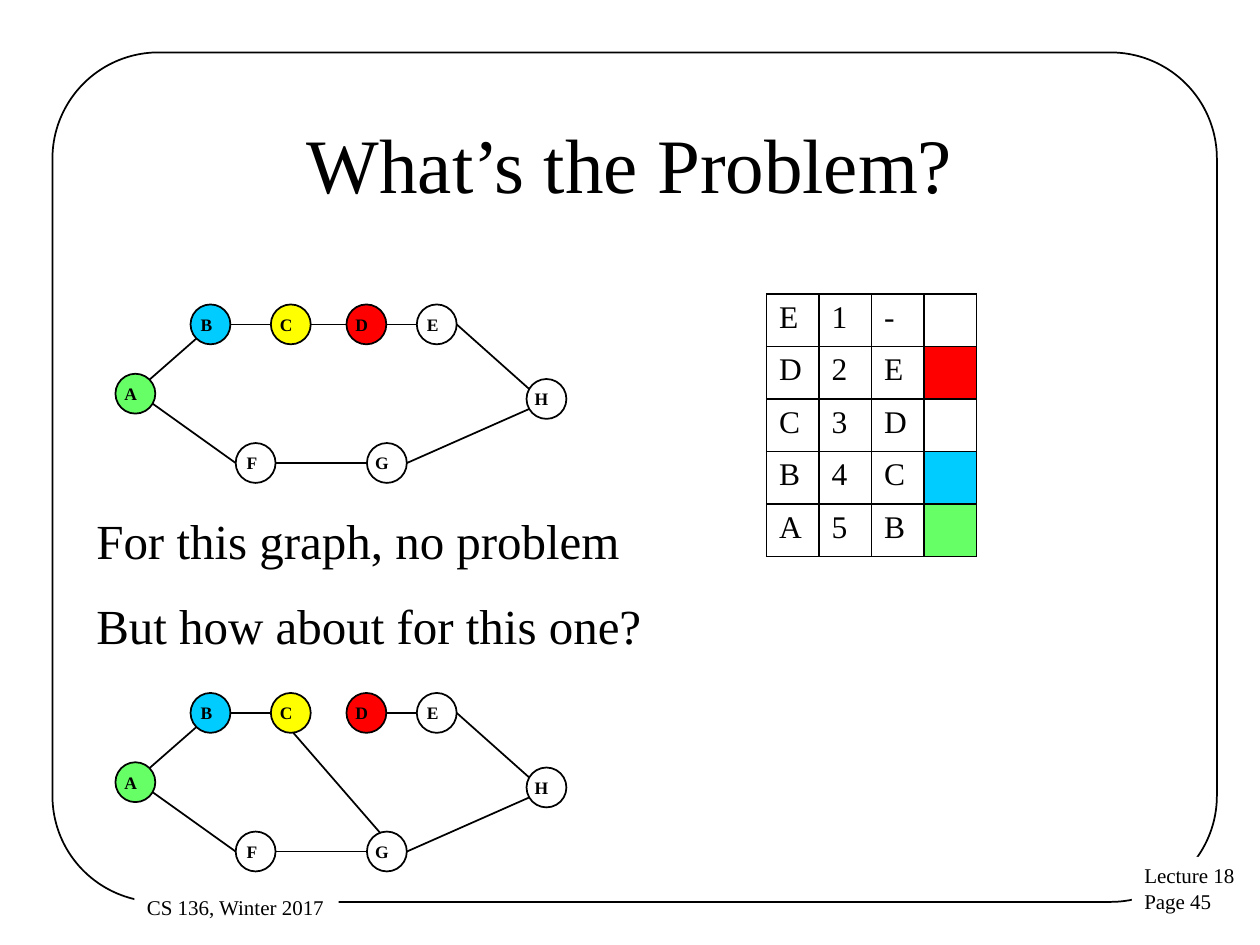
import math

import lxml.etree
import pptx
import pptx.dml.color
import pptx.enum.shapes
import pptx.enum.text
import pptx.oxml.ns
import pptx.util

COLORS = {"ink": "000000", "paper": "FFFFFF", "green": "66FF66",
          "blue": "00CCFF", "yellow": "FFFF00", "red": "FF0000"}
NODES = {"A": (2.58, 7.5, "green"), "B": (4.01, 6.18, "blue"),
         "C": (5.54, 6.18, "yellow"), "D": (6.98, 6.18, "red"),
         "E": (8.32, 6.18, None), "F": (4.87, 8.82, None),
         "G": (7.37, 8.82, None), "H": (10.41, 7.6, None)}
SHARED_EDGES = [("A", -45, "B", 135), ("A", 30, "F", 180),
                ("B", 0, "C", 180), ("D", 0, "E", 180),
                ("F", 0, "G", 180), ("G", 0, "H", 150),
                ("E", 0, "H", 210)]
ROUTES = [("E", "1", "-", "paper"), ("D", "2", "E", "red"),
          ("C", "3", "D", "paper"), ("B", "4", "C", "blue"),
          ("A", "5", "B", "green")]


class Deck:
    """Draws in one style on the current slide, in a grid of 24 columns by 18 rows."""

    font = "Times New Roman"
    node_size = 0.76

    def __init__(self):
        self.prs = pptx.Presentation()
        self.prs.slide_width = pptx.util.Inches(10)
        self.prs.slide_height = pptx.util.Inches(7.5)
        self.slide = self.prs.slides.add_slide(self.prs.slide_layouts[5])

    def grid(self, *values):
        return [round(v * self.prs.slide_width / 24) for v in values]

    def color(self, name):
        return pptx.dml.color.RGBColor.from_string(COLORS[name])

    def paint(self, item, name):
        if name:
            item.fill.solid()
            item.fill.fore_color.rgb = self.color(name)
        else:
            item.fill.background()

    def outline(self, sp):
        sp.line.color.rgb = self.color("ink")
        sp.line.width = pptx.util.Pt(1)

    def set_text(self, tf, text, size, bold=False, align=None):
        tf.text = text
        for p in tf.paragraphs:
            p.alignment = align
            p.font.name = self.font
            p.font.size = pptx.util.Pt(size)
            p.font.bold = bold
            p.font.color.rgb = self.color("ink")

    def title(self, text, *box):
        sp = self.slide.shapes.title
        sp.left, sp.top, sp.width, sp.height = self.grid(*box)
        sp.text_frame.vertical_anchor = pptx.enum.text.MSO_ANCHOR.MIDDLE
        self.set_text(sp.text_frame, text, 44, align=pptx.enum.text.PP_ALIGN.CENTER)

    def text(self, text, size, *box, fill=None):
        sp = self.slide.shapes.add_textbox(*self.grid(*box))
        self.paint(sp, fill)
        sp.text_frame.word_wrap = False
        sp.text_frame.auto_size = pptx.enum.text.MSO_AUTO_SIZE.SHAPE_TO_FIT_TEXT
        self.set_text(sp.text_frame, text, size)

    def shape(self, kind, fill, *box):
        sp = self.slide.shapes.add_shape(kind, *self.grid(*box))
        sp.shadow.inherit = False
        self.paint(sp, fill)
        self.outline(sp)
        return sp

    def frame(self, *box):
        sp = self.shape(pptx.enum.shapes.MSO_SHAPE.ROUNDED_RECTANGLE, None, *box)
        sp.adjustments[0] = 0.125

    def node(self, name, x, y, fill):
        d = self.node_size
        sp = self.shape(pptx.enum.shapes.MSO_SHAPE.OVAL, fill, x - d / 2, y - d / 2, d, d)
        tf = sp.text_frame
        tf.word_wrap = False
        tf.vertical_anchor = pptx.enum.text.MSO_ANCHOR.MIDDLE
        self.set_text(tf, name, 10, True, pptx.enum.text.PP_ALIGN.RIGHT)

    def rim(self, name, angle, down):
        x, y, _ = NODES[name]
        r, turn = self.node_size / 2, math.radians(angle)
        return x + r * math.cos(turn), y + down + r * math.sin(turn)

    def edge(self, start, end):
        c = self.slide.shapes.add_connector(
            pptx.enum.shapes.MSO_CONNECTOR.STRAIGHT, *self.grid(*start, *end))
        self.outline(c)
        lxml.etree.SubElement(c._element.spPr, pptx.oxml.ns.qn("a:effectLst"))

    def graph(self, extra_edge, down=0):
        for name, (x, y, fill) in NODES.items():
            self.node(name, x, y + down, fill)
        for a, a_angle, b, b_angle in SHARED_EDGES + [extra_edge]:
            self.edge(self.rim(a, a_angle, down), self.rim(b, b_angle, down))

    def border(self, cell):
        qn = pptx.oxml.ns.qn
        tc_pr = cell._tc.get_or_add_tcPr()
        for side in "LRTB":
            ln = lxml.etree.SubElement(tc_pr, qn("a:ln" + side), w="12700")
            solid = lxml.etree.SubElement(ln, qn("a:solidFill"))
            lxml.etree.SubElement(solid, qn("a:srgbClr"), val=COLORS["ink"])

    def table(self, rows, left, top):
        box = self.grid(left, top, 4, len(rows))
        table = self.slide.shapes.add_table(len(rows), 4, *box).table
        table.first_row = table.horz_banding = False
        for i, (*texts, mark) in enumerate(rows):
            for j, text in enumerate(texts + [""]):
                cell = table.cell(i, j)
                self.border(cell)
                self.paint(cell, mark if j == 3 else "paper")
                self.set_text(cell.text_frame, text, 18)


def main():
    deck = Deck()
    deck.frame(1, 1, 22.18, 16.18)
    deck.text("Lecture 18\nPage 45", 12, 21.56, 16.32, 2.23, 1.23, fill="paper")
    deck.text("CS 136, Winter 2017", 12, 2.56, 16.92, 3.89, 0.73, fill="paper")
    deck.title("What’s the Problem?", 1.8, 1.6, 20.4, 3)
    deck.graph(("C", 0, "D", 180))
    deck.table(ROUTES, 14.6, 5.6)
    deck.text("For this graph, no problem", 28, 1.6, 9.6, 10.56, 1.37)
    deck.graph(("C", 83, "G", 250), down=7.4)
    deck.text("But how about for this one?", 28, 1.6, 11.22, 10.97, 1.37)
    deck.prs.save("out.pptx")


if __name__ == "__main__":
    main()
